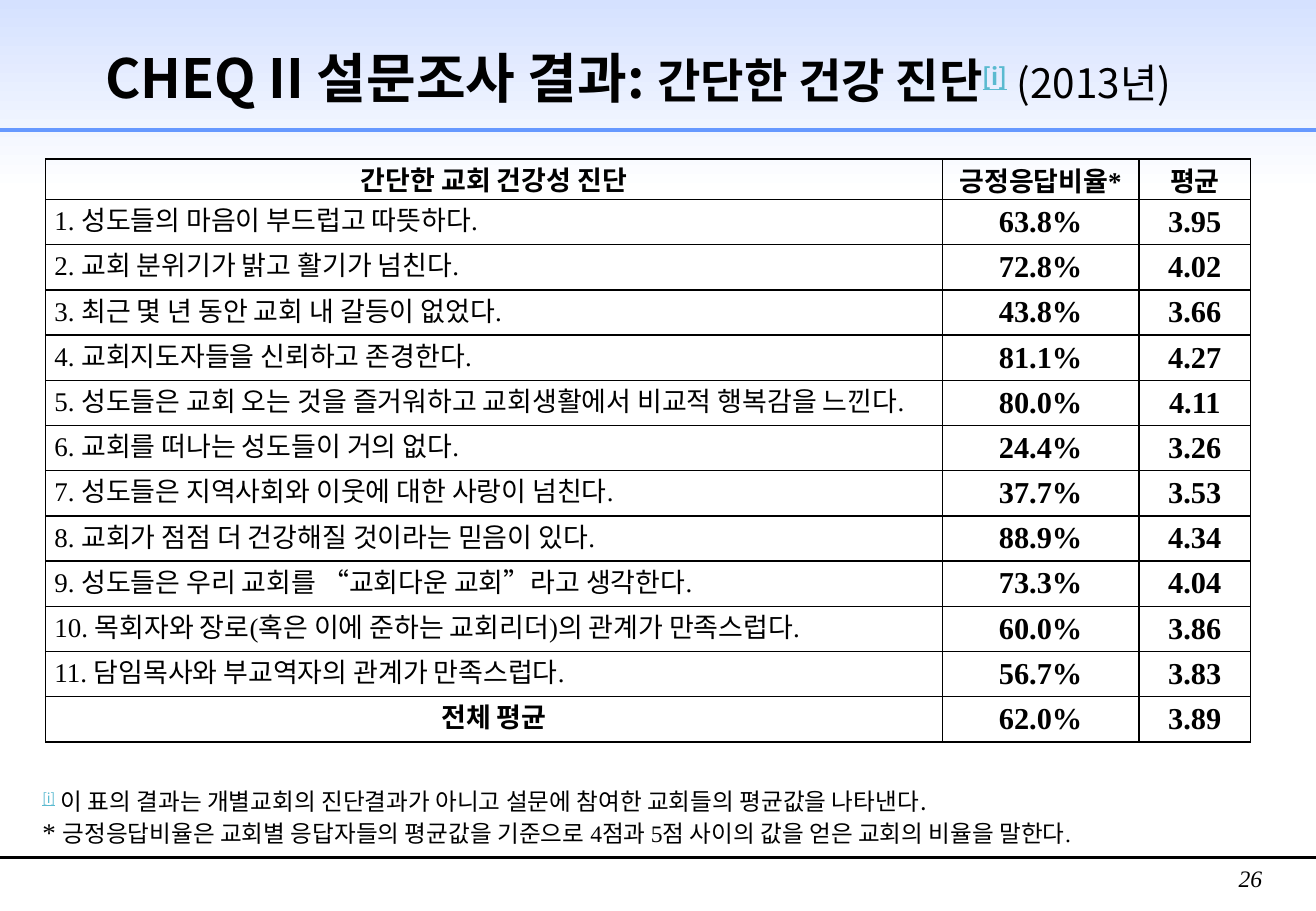
from lxml import etree
from pptx import Presentation
from pptx.dml.color import RGBColor
from pptx.enum.shapes import MSO_CONNECTOR, MSO_SHAPE
from pptx.enum.text import MSO_ANCHOR, PP_ALIGN
from pptx.oxml.ns import qn
from pptx.util import Pt

LEFT, CENTER, RIGHT, JUSTIFY = PP_ALIGN.LEFT, PP_ALIGN.CENTER, PP_ALIGN.RIGHT, PP_ALIGN.JUSTIFY
TOP, MIDDLE = MSO_ANCHOR.TOP, MSO_ANCHOR.MIDDLE
RECTANGLE, STRAIGHT = MSO_SHAPE.RECTANGLE, MSO_CONNECTOR.STRAIGHT

COLORS = {"text": "000000", "link": "5ABAD0", "sky": "D5E1FF", "white": "FFFFFF", "rule": "6699FF"}
SANS, SERIF = "Noto Sans CJK KR", "Times New Roman"
SLIDE_WIDTH, SLIDE_HEIGHT = 780, 540
COLUMN_WIDTHS = (531.4, 116.6, 66.2)
HEADER_HEIGHT, ROW_HEIGHT = 24, 26.8

HEADINGS = ("간단한 교회 건강성 진단", "긍정응답비율*", "평균")
RESULTS = (
    ("성도들의 마음이 부드럽고 따뜻하다.", "63.8%", "3.95"),
    ("교회 분위기가 밝고 활기가 넘친다.", "72.8%", "4.02"),
    ("최근 몇 년 동안 교회 내 갈등이 없었다.", "43.8%", "3.66"),
    ("교회지도자들을 신뢰하고 존경한다.", "81.1%", "4.27"),
    ("성도들은 교회 오는 것을 즐거워하고 교회생활에서 비교적 행복감을 느낀다.", "80.0%", "4.11"),
    ("교회를 떠나는 성도들이 거의 없다.", "24.4%", "3.26"),
    ("성도들은 지역사회와 이웃에 대한 사랑이 넘친다.", "37.7%", "3.53"),
    ("교회가 점점 더 건강해질 것이라는 믿음이 있다.", "88.9%", "4.34"),
    ("성도들은 우리 교회를 “교회다운 교회”라고 생각한다.", "73.3%", "4.04"),
    ("목회자와 장로(혹은 이에 준하는 교회리더)의 관계가 만족스럽다.", "60.0%", "3.86"),
    ("담임목사와 부교역자의 관계가 만족스럽다.", "56.7%", "3.83"),
)
TOTAL = ("전체 평균", "62.0%", "3.89")


def color(name):
    return RGBColor.from_string(COLORS[name])


def add_text(para, text, size=16, font=SERIF, bold=False, italic=False, note=False):
    """Add a span; note makes it a raised, underlined reference mark."""
    span = para.add_run()
    span.text = text
    span.font.size = Pt(size)
    span.font.name = font
    span.font.bold = bold
    span.font.italic = italic
    span.font.underline = note
    span.font.color.rgb = color("link" if note else "text")
    properties = span.font._element
    if note:
        properties.set("baseline", "30000")
    etree.SubElement(properties, qn("a:ea")).set("typeface", SANS)


def add_box(page, left, top, width, height, anchor=TOP):
    box = page.shapes.add_textbox(Pt(left), Pt(top), Pt(width), Pt(height))
    box.text_frame.word_wrap = True
    box.text_frame.vertical_anchor = anchor
    return box.text_frame


def add_rule(page, top, color_name, weight):
    rule = page.shapes.add_connector(STRAIGHT, 0, Pt(top), Pt(SLIDE_WIDTH), Pt(top))
    rule.line.color.rgb = color(color_name)
    rule.line.width = Pt(weight)
    etree.SubElement(rule._element.spPr, qn("a:effectLst"))


def add_header_band(page):
    band = page.shapes.add_shape(RECTANGLE, 0, 0, Pt(SLIDE_WIDTH), Pt(113.8))
    band.shadow.inherit = False
    band.line.fill.background()
    band.fill.gradient()
    band.fill.gradient_angle = 270
    for stop, name in zip(band.fill.gradient_stops, ("sky", "white")):
        stop.color.rgb = color(name)


def add_borders(cell):
    properties = cell._tc.get_or_add_tcPr()
    for index, side in enumerate(("a:lnL", "a:lnR", "a:lnT", "a:lnB")):
        line = etree.Element(qn(side), w=str(Pt(1)))
        fill = etree.SubElement(line, qn("a:solidFill"))
        etree.SubElement(fill, qn("a:srgbClr"), val=COLORS["text"])
        properties.insert(index, line)


def fill_cell(cell, text, align=CENTER, anchor=MIDDLE, **style):
    cell.margin_left = cell.margin_right = Pt(5.2)
    cell.margin_top = cell.margin_bottom = 0
    cell.vertical_anchor = anchor
    cell.fill.background()
    add_borders(cell)
    para = cell.text_frame.paragraphs[0]
    para.alignment = align
    add_text(para, text, **style)


def add_results_table(page):
    questions = [(f"{number}. {text}", *values) for number, (text, *values) in enumerate(RESULTS, 1)]
    rows = [HEADINGS, *questions, TOTAL]
    height = HEADER_HEIGHT + ROW_HEIGHT * (len(rows) - 1)
    table = page.shapes.add_table(len(rows), len(HEADINGS), Pt(27.1), Pt(94.3),
                                  Pt(sum(COLUMN_WIDTHS)), Pt(height)).table
    table.first_row = table.horz_banding = False
    for column, width in zip(table.columns, COLUMN_WIDTHS):
        column.width = Pt(width)
    for index, values in enumerate(rows):
        is_header = index == 0
        is_question = 0 < index < len(rows) - 1
        table.rows[index].height = Pt(HEADER_HEIGHT if is_header else ROW_HEIGHT)
        label, *figures = values
        fill_cell(table.cell(index, 0), label, align=JUSTIFY if is_question else CENTER,
                  anchor=TOP, bold=not is_question)
        for column, figure in enumerate(figures, 1):
            fill_cell(table.cell(index, column), figure, size=16 if is_header else 18, bold=True)


def add_title(page):
    para = add_box(page, 55.4, 22.3, 743, 46, anchor=MIDDLE).paragraphs[0]
    add_text(para, "CHEQ II 설문조사 결과: ", size=32, font=SANS, bold=True)
    add_text(para, "간단한 건강 진단", size=28, font=SANS, bold=True)
    add_text(para, "[i]", size=24, font=SANS, bold=True, note=True)
    add_text(para, " ", size=24, font=SANS, bold=True)
    add_text(para, "(2013년)", size=24, font=SANS)


def add_footnotes(page):
    frame = add_box(page, 18, 463, 684.7, 60.5)
    para = frame.paragraphs[0]
    add_text(para, "[i]", size=14, font=SANS, note=True)
    add_text(para, " 이 표의 결과는 개별교회의 진단결과가 아니고 설문에 참여한 교회들의 평균값을 나타낸다.",
             size=14, font=SANS)
    para = frame.add_paragraph()
    add_text(para, "* ")
    add_text(para, "긍정응답비율은 교회별 응답자들의 평균값을 기준으로 4점과 5점 사이의 값을 얻은 "
                   "교회의 비율을 말한다.", size=14)


def add_page_number(page):
    para = add_box(page, 704.9, 508.3, 50.4, 31.7).paragraphs[0]
    para.alignment = RIGHT
    add_text(para, "26", size=14, italic=True)


def main():
    deck = Presentation()
    deck.slide_width, deck.slide_height = Pt(SLIDE_WIDTH), Pt(SLIDE_HEIGHT)
    page = deck.slides.add_slide(deck.slide_layouts[6])
    add_header_band(page)
    add_rule(page, 77, "rule", 2.25)
    add_rule(page, 508.3, "text", 1.5)
    add_page_number(page)
    add_results_table(page)
    add_title(page)
    add_footnotes(page)
    deck.save("out.pptx")


if __name__ == "__main__":
    main()
